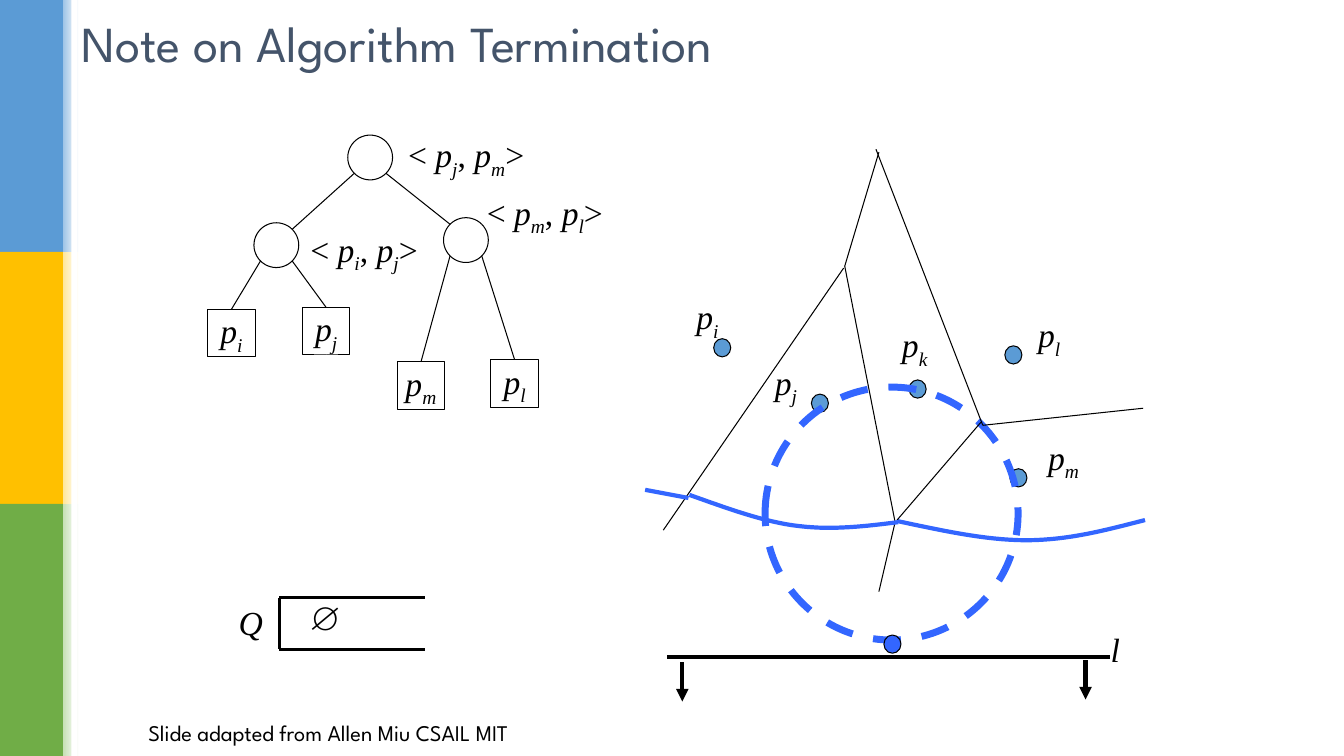
from collections import namedtuple

from lxml.etree import SubElement
from pptx import Presentation
from pptx.dml.color import RGBColor
from pptx.enum.dml import MSO_LINE
from pptx.enum.shapes import MSO_CONNECTOR, MSO_SHAPE
from pptx.enum.text import MSO_ANCHOR, MSO_AUTO_SIZE, PP_ALIGN
from pptx.oxml.ns import qn
from pptx.util import Pt

BLACK = RGBColor(0x00, 0x00, 0x00)
WHITE = RGBColor(0xFF, 0xFF, 0xFF)
SLATE = RGBColor(0x44, 0x54, 0x6A)
SITE_BLUE = RGBColor(0x5B, 0x9B, 0xD5)
BEACH_BLUE = RGBColor(0x33, 0x66, 0xFF)
SIDEBAR_COLORS = [
    (SITE_BLUE, RGBColor(0x9D, 0xC3, 0xE6)),
    (RGBColor(0xFF, 0xC0, 0x00), RGBColor(0xFF, 0xE6, 0x99)),
    (RGBColor(0x70, 0xAD, 0x47), RGBColor(0xC5, 0xE0, 0xB4)),
]

HEADING_FONT = "League Spartan"
MATH = {"name": "Times New Roman", "size": Pt(24), "italic": False}
VARIABLE = MATH | {"italic": True}
INDEX = VARIABLE | {"baseline": "-25000"}
LABEL_FRAME = {"word_wrap": False, "auto_size": MSO_AUTO_SIZE.SHAPE_TO_FIT_TEXT}
LEAF_FRAME = {"word_wrap": False, "vertical_anchor": MSO_ANCHOR.MIDDLE}
HEADING_FRAME = {"word_wrap": True, "auto_size": MSO_AUTO_SIZE.NONE,
                 "vertical_anchor": MSO_ANCHOR.MIDDLE}

Box = namedtuple("Box", "left top width height")


def apply_format(target, values):
    for name, value in values.items():
        setattr(target, name, value)


def place(box, x, y, width, height):
    return Pt(box.left + x), Pt(box.top + y), Pt(width), Pt(height)


def site_name(index):
    return [("p", VARIABLE), (index, INDEX)]


def breakpoint_name(left, right):
    return [("< ", MATH), *site_name(left), (", ", MATH), *site_name(right), (">", MATH)]


def write_math(frame, parts, frame_format, alignment=PP_ALIGN.LEFT):
    apply_format(frame, frame_format)
    paragraph = frame.paragraphs[0]
    paragraph.alignment = alignment
    for text, text_format in parts:
        run = paragraph.add_run()
        run.text = text
        values = dict(text_format)
        baseline = values.pop("baseline", None)
        apply_format(run.font, values)
        run.font.color.rgb = BLACK
        if baseline:
            run.font._element.set("baseline", baseline)


def write_heading(frame, text, size, color, alignment):
    apply_format(frame, HEADING_FRAME)
    frame.text = text
    paragraph = frame.paragraphs[0]
    paragraph.alignment = alignment
    apply_format(paragraph.font, {"name": HEADING_FONT, "size": Pt(size)})
    paragraph.font.color.rgb = color


def add_label(slide, box, x, y, width, parts):
    label = slide.shapes.add_textbox(*place(box, x, y, width, 36))
    write_math(label.text_frame, parts, LABEL_FRAME)


def set_outline(shape, color, width):
    shape.line.color.rgb = color
    shape.line.width = Pt(width)


def add_shape(slide, box, kind, x, y, width, height, fill=None, line=BLACK, weight=0.75):
    shape = slide.shapes.add_shape(kind, *place(box, x, y, width, height))
    shape.shadow.inherit = False
    if fill is None:
        shape.fill.background()
    else:
        shape.fill.solid()
        shape.fill.fore_color.rgb = fill
    if line is None:
        shape.line.fill.background()
    else:
        set_outline(shape, line, weight)
    return shape


def add_line(slide, box, start, end, weight=0.75, color=BLACK, arrow=False):
    ends = [Pt(origin + offset) for point in (start, end)
            for origin, offset in zip((box.left, box.top), point)]
    connector = slide.shapes.add_connector(MSO_CONNECTOR.STRAIGHT, *ends)
    set_outline(connector, color, weight)
    if arrow:
        SubElement(connector.line._get_or_add_ln(), qn("a:tailEnd"), type="triangle")
    SubElement(connector._element.spPr, qn("a:effectLst"))


def bezier_points(controls, steps=16):
    for step in range(steps + 1):
        t = step / steps
        weights = ((1 - t) ** 3, 3 * t * (1 - t) ** 2, 3 * t * t * (1 - t), t ** 3)
        yield tuple(sum(w * point[axis] for w, point in zip(weights, controls))
                    for axis in (0, 1))


def add_curve(slide, box, controls):
    points = [(Pt(box.left + x), Pt(box.top + y))
              for first in range(0, len(controls) - 1, 3)
              for x, y in bezier_points(controls[first:first + 4])]
    builder = slide.shapes.build_freeform(*points[0])
    builder.add_line_segments(points[1:], close=False)
    curve = builder.convert_to_shape()
    curve.shadow.inherit = False
    curve.fill.background()
    set_outline(curve, BEACH_BLUE, 3)


def build_sidebar(slide, box):
    band_height = box.height / len(SIDEBAR_COLORS)
    for row, (color, tint) in enumerate(SIDEBAR_COLORS):
        top = row * band_height
        add_shape(slide, box, MSO_SHAPE.RECTANGLE, 0, top, 45, band_height, color, None)
        fade = add_shape(slide, box, MSO_SHAPE.RECTANGLE, 45, top, 11.5, band_height, tint, None)
        fade.fill.gradient()
        fade.fill.gradient_angle = 0
        for stop, stop_color in zip(fade.fill.gradient_stops, (tint, WHITE)):
            stop.color.rgb = stop_color
    add_shape(slide, box, MSO_SHAPE.RECTANGLE, 51, 0, 4, box.height, WHITE, None)


def build_title(slide, box):
    title = slide.shapes.title
    apply_format(title, dict(zip(("left", "top", "width", "height"), map(Pt, box))))
    write_heading(title.text_frame, "Note on Algorithm Termination", 36, SLATE, PP_ALIGN.LEFT)


def build_tree(slide, box):
    diameter, inset, leaf_side = 32, 4.7, 34
    far = diameter - inset
    root, left, right = (100.4, 4.5), (33.4, 67.1), (168.8, 63.5)
    leaves = [("i", left, inset, 0.3, 129), ("j", left, far, 68, 127.6),
              ("m", right, inset, 135.7, 166.5), ("l", right, far, 202.6, 165)]
    for x, y in (root, left, right):
        add_shape(slide, box, MSO_SHAPE.OVAL, x, y, diameter, diameter)
    for child, start, end in ((left, inset, far), (right, far, inset)):
        add_line(slide, box, (root[0] + start, root[1] + far), (child[0] + end, child[1] + inset))
    for index, parent, start, x, y in leaves:
        leaf = add_shape(slide, box, MSO_SHAPE.RECTANGLE, x, y, leaf_side, leaf_side)
        write_math(leaf.text_frame, site_name(index), LEAF_FRAME, PP_ALIGN.CENTER)
        add_line(slide, box, (parent[0] + start, parent[1] + far), (x + leaf_side / 2, y))
    for pair, x, y, width in (("jm", 136.4, 0.2, 99), ("ij", 66.6, 67.8, 92),
                              ("ml", 192.6, 41.2, 99)):
        add_label(slide, box, x, y, width, breakpoint_name(*pair))


def build_voronoi(slide, box):
    dot = (12.2, 13)
    sites = [("i", (49.8, 141.9), (30.3, 108.1), 31), ("j", (119.6, 181.5), (86.5, 154.9), 31),
             ("k", (189.4, 171.4), (177.2, 128.2), 34), ("l", (257.8, 147), (274.4, 121), 31),
             ("m", (261.4, 234.8), (281.6, 208.2), 38)]
    for index, position, label, width in sites:
        add_shape(slide, box, MSO_SHAPE.OVAL, *position, *dot, SITE_BLUE)
        add_label(slide, box, *label, width, site_name(index))

    sweep = 369.4
    add_line(slide, box, (16.6, sweep), (332.7, sweep), 3)
    for x, top in ((27.4, 373), (315.4, 371.6)):
        add_line(slide, box, (x, top), (x, top + 28.1), 3, arrow=True)
    add_label(slide, box, 326.2, 345.7, 21, [("l", VARIABLE)])

    add_curve(slide, box, [(180.8, 272.2), (211.8, 278.7), (243.4, 285.9), (273, 285.9),
                           (303.2, 285.9), (329.8, 278.7), (357.9, 271.5)])
    circle = add_shape(slide, box, MSO_SHAPE.OVAL, 86.5, 176.5, 180.7, 180.7,
                       line=BEACH_BLUE, weight=5)
    circle.line.dash_style = MSO_LINE.DASH
    add_shape(slide, box, MSO_SHAPE.OVAL, 171.4, 353.6, *dot, BEACH_BLUE)

    upper, lower, east = (143.4, 90.1), (179.4, 273), (242, 203.8)
    edges = [((13.8, 278.7), (142.6, 91.5)), (upper, lower), ((240.6, 201.7), (180.8, 271.5)),
             (east, (356.5, 191.6)), ((165.7, 6.6), east), ((167.8, 8.7), upper),
             (lower, (167.8, 322.6))]
    for start, end in edges:
        add_line(slide, box, start, end)
    add_curve(slide, box, [(32.5, 253.5), (59.1, 262.9), (85.8, 273), (111, 275.8),
                           (135.4, 278.7), (158.5, 275.8), (181.5, 273)])
    add_line(slide, box, (31.8, 255.7), (0.8, 249.9), 3, BEACH_BLUE)


def build_queue(slide, box):
    left, right, top, bottom = 36.4, 140.8, 5, 41.7
    for y in (top, bottom):
        add_line(slide, box, (left, y), (right, y), 2)
    add_line(slide, box, (left, top), (left, bottom), 2)
    add_label(slide, box, 0.4, 4.2, 32, [("Q", VARIABLE)])
    add_label(slide, box, 50.1, 0.6, 35, [("∅", MATH)])


def build_credit(slide, box):
    credit = slide.shapes.add_textbox(*map(Pt, box))
    write_heading(credit.text_frame, "Slide adapted from Allen Miu CSAIL MIT", 16, BLACK,
                  PP_ALIGN.CENTER)


def main():
    presentation = Presentation()
    apply_format(presentation, {"slide_width": Pt(960), "slide_height": Pt(540)})
    slide = presentation.slides.add_slide(presentation.slide_layouts[5])
    build_sidebar(slide, Box(0, 0, 56.5, 540))
    build_title(slide, Box(51, 0, 895, 60))
    build_tree(slide, Box(148, 92, 292, 201))
    build_voronoi(slide, Box(460, 100, 358, 402))
    build_queue(slide, Box(163, 422, 141, 42))
    build_credit(slide, Box(54, 506, 361, 34))
    presentation.save("out.pptx")


if __name__ == "__main__":
    main()
